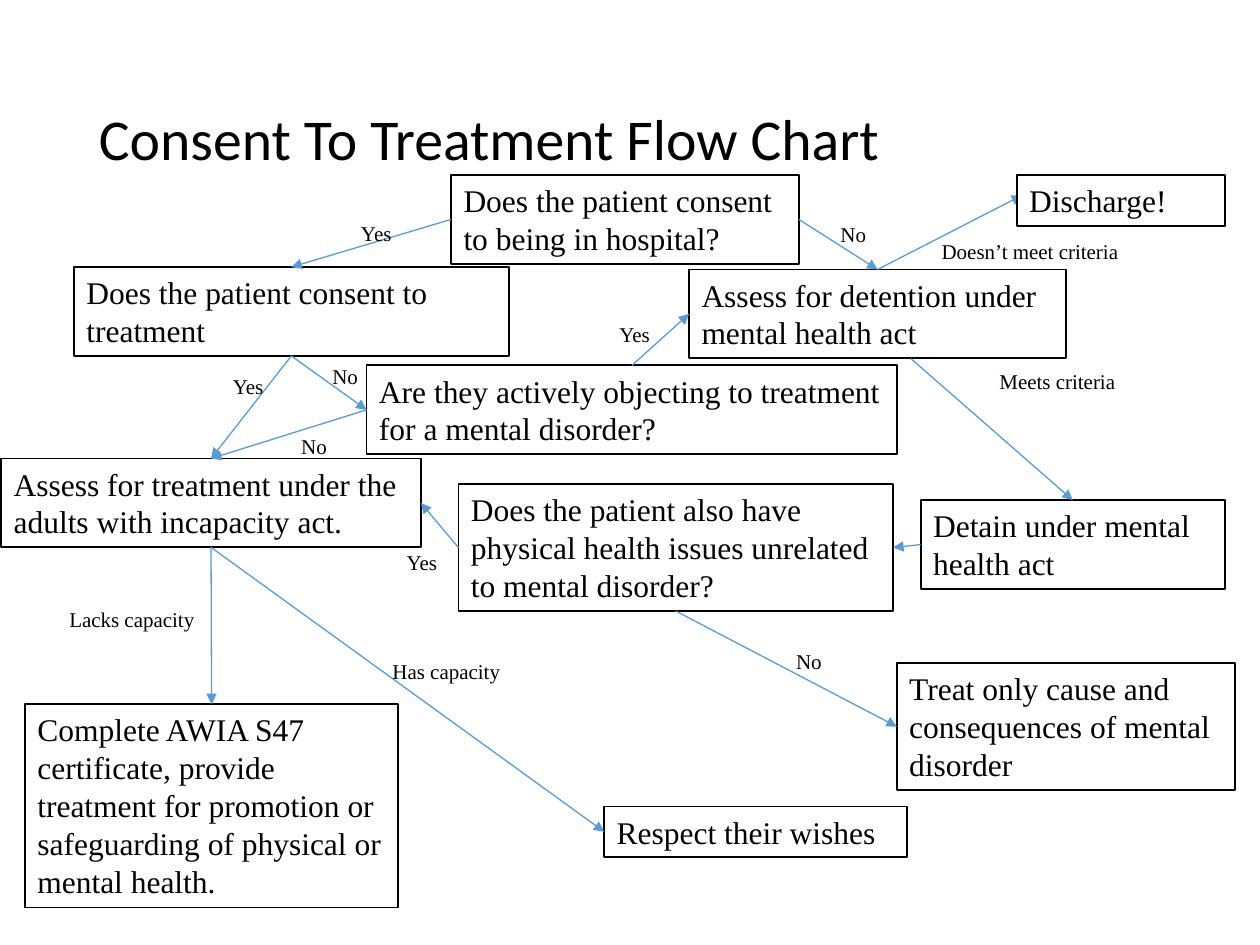
from dataclasses import dataclass

from lxml import etree
from pptx import Presentation
from pptx.dml.color import RGBColor
from pptx.enum import shapes, text
from pptx.oxml import ns
from pptx.util import Pt


@dataclass(frozen=True)
class Theme:
    ink: RGBColor = RGBColor(0, 0, 0)
    paper: RGBColor = RGBColor(255, 255, 255)
    arrow: RGBColor = RGBColor(0x5B, 0x9B, 0xD5)
    title_font: str = "Calibri"
    body_font: str = "Times New Roman"
    title_size: float = 33
    box_size: float = 18
    label_size: float = 12
    box_line: float = 1
    arrow_line: float = 0.75


THEME = Theme()
TOP, LEFT, BOTTOM, RIGHT = range(4)

BOXES = {
    "objecting": (209.5, 208.8, 303.2, 2, "Are they actively objecting to treatment for a mental disorder?"),
    "hospital": (257.8, 100, 198.7, 2, "Does the patient consent to being in hospital?"),
    "treatment": (42.3, 152.6, 248.4, 2, "Does the patient consent to treatment"),
    "detention": (393.8, 154, 215.4, 2, "Assess for detention under mental health act"),
    "incapacity": (0.7, 262, 239.8, 2, "Assess for treatment under the adults with incapacity act."),
    "detain": (526.1, 285.8, 173.8, 2, "Detain under mental health act"),
    "respect": (345.3, 460.8, 173, 1, "Respect their wishes"),
    "certificate": (14.3, 402.4, 213.2, 5,
                    "Complete AWIA S47 certificate, provide treatment for promotion "
                    "or safeguarding of physical or mental health."),
    "physical": (262, 276.6, 248.4, 3,
                 "Does the patient also have physical health issues unrelated to mental disorder?"),
    "cause": (512.5, 378.9, 193.2, 3, "Treat only cause and consequences of mental disorder"),
}
DISCHARGE = (581, 100, 119, 1, "Discharge!")

JOINED_ARROWS = [
    ("hospital", LEFT, "treatment", TOP),
    ("hospital", RIGHT, "detention", TOP),
    ("treatment", BOTTOM, "incapacity", TOP),
    ("treatment", BOTTOM, "objecting", LEFT),
    ("objecting", TOP, "detention", LEFT),
    ("objecting", LEFT, "incapacity", TOP),
    ("incapacity", BOTTOM, "respect", LEFT),
    ("incapacity", BOTTOM, "certificate", TOP),
    ("detain", LEFT, "physical", RIGHT),
    ("physical", LEFT, "incapacity", RIGHT),
    ("physical", BOTTOM, "cause", LEFT),
]

LABELS = [
    ("Yes", 199.2, 122.4, 57),
    ("No", 473.2, 123.2, 63),
    ("Yes", 126, 210, 57),
    ("No", 165, 244.2, 63),
    ("Yes", 346.8, 180.2, 57),
    ("No", 182.8, 204, 63),
    ("Meets criteria", 564, 206.8, 92),
    ("Has capacity", 217.2, 372.9, 92),
    ("Lacks capacity", 32.5, 343.2, 92),
    ("Doesn’t meet criteria", 531, 132.6, 124),
    ("Yes", 225.2, 310.5, 57),
    ("No", 447.8, 367, 63),
]


def write(shape, words, size, font=THEME.body_font, anchor=text.MSO_ANCHOR.TOP):
    frame = shape.text_frame
    frame.word_wrap = True
    frame.vertical_anchor = anchor
    paragraph = frame.paragraphs[0]
    paragraph.text = words
    paragraph.alignment = text.PP_ALIGN.LEFT
    paragraph.font.name = font
    paragraph.font.size = Pt(size)
    paragraph.font.color.rgb = THEME.ink
    return paragraph


def add_title(slide, words):
    shape = slide.shapes.add_textbox(Pt(49.5), Pt(28.8), Pt(621), Pt(104.4))
    paragraph = write(shape, words, THEME.title_size, THEME.title_font, text.MSO_ANCHOR.MIDDLE)
    paragraph.line_spacing = 0.9


def add_box(slide, left, top, width, lines, words):
    height = 7.2 + 21.8 * lines
    shape = slide.shapes.add_shape(
        shapes.MSO_SHAPE.RECTANGLE, Pt(left), Pt(top), Pt(width), Pt(height))
    shape.shadow.inherit = False
    shape.fill.solid()
    shape.fill.fore_color.rgb = THEME.paper
    shape.line.color.rgb = THEME.ink
    shape.line.width = Pt(THEME.box_line)
    write(shape, words, THEME.box_size)
    return shape


def add_label(slide, words, left, top, width):
    shape = slide.shapes.add_textbox(Pt(left), Pt(top), Pt(width), Pt(21.8))
    write(shape, words, THEME.label_size)


def add_arrow(slide, start=(0, 0), end=(0, 0)):
    points = [Pt(value) for value in (*start, *end)]
    arrow = slide.shapes.add_connector(shapes.MSO_CONNECTOR.STRAIGHT, *points)
    arrow.line.color.rgb = THEME.arrow
    arrow.line.width = Pt(THEME.arrow_line)
    properties = arrow._element.spPr
    etree.SubElement(properties.find(ns.qn("a:ln")), ns.qn("a:tailEnd"), type="triangle")
    etree.SubElement(properties, ns.qn("a:effectLst"))
    return arrow


def main():
    presentation = Presentation()
    presentation.slide_width, presentation.slide_height = Pt(720), Pt(540)
    slide = presentation.slides.add_slide(presentation.slide_layouts[6])

    add_title(slide, "Consent To Treatment Flow Chart")
    boxes = {name: add_box(slide, *box) for name, box in BOXES.items()}

    for source, source_side, target, target_side in JOINED_ARROWS:
        arrow = add_arrow(slide)
        arrow.begin_connect(boxes[source], source_side)
        arrow.end_connect(boxes[target], target_side)

    add_arrow(slide, start=(520.6, 205)).end_connect(boxes["detain"], TOP)
    add_arrow(slide, end=(584, 111.6)).begin_connect(boxes["detention"], TOP)
    add_box(slide, *DISCHARGE)

    for label in LABELS:
        add_label(slide, *label)

    presentation.save("out.pptx")


if __name__ == "__main__":
    main()
